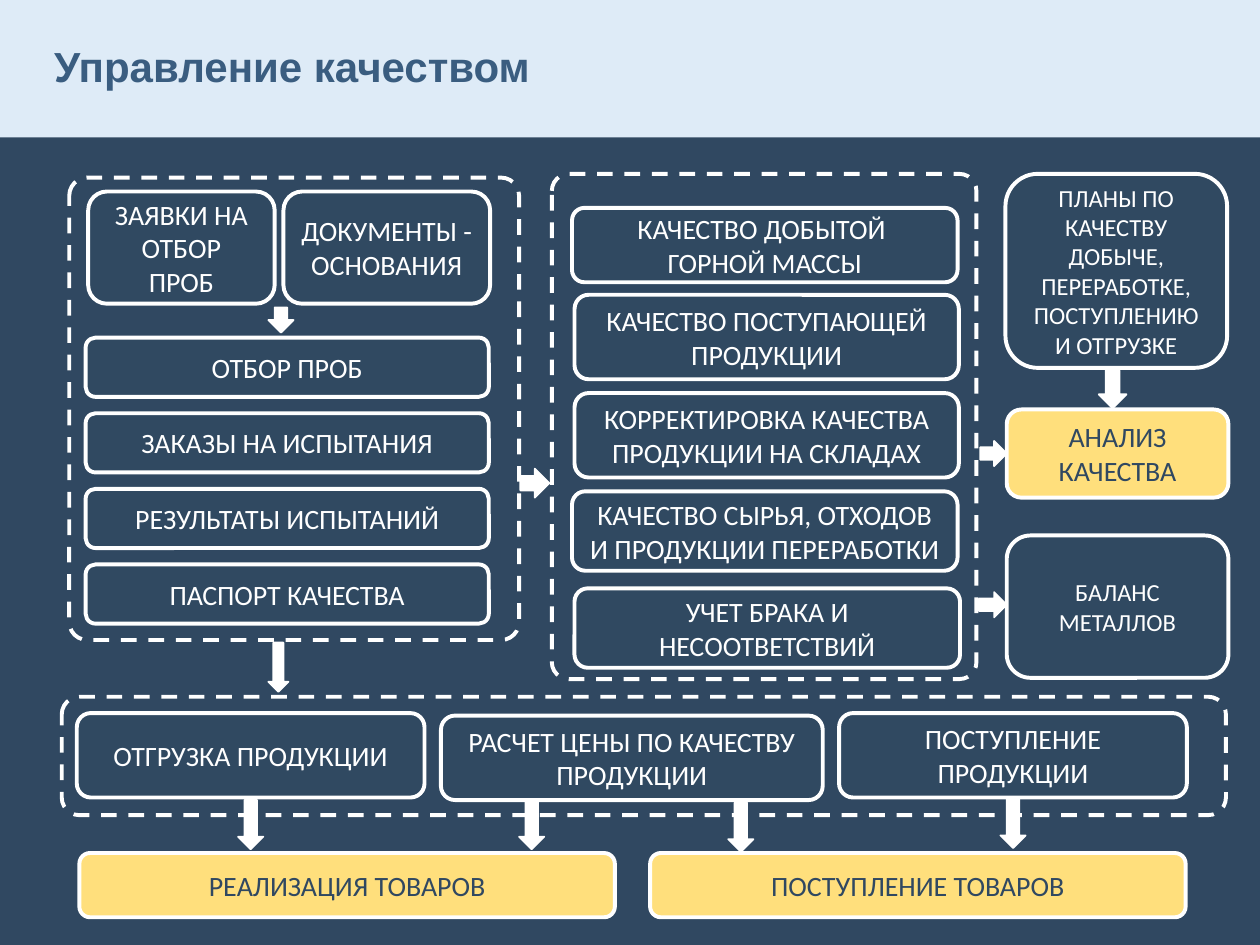
from dataclasses import dataclass

import pptx
import pptx.util
from pptx.dml.color import RGBColor
from pptx.enum.dml import MSO_LINE
from pptx.enum.shapes import MSO_SHAPE
from pptx.enum.text import MSO_ANCHOR, PP_ALIGN
from pptx.util import Inches


@dataclass(frozen=True)
class Theme:
    navy: str = "304861"
    box: str = "304961"
    band: str = "DEEBF7"
    title: str = "3A5D80"
    yellow: str = "FFDF7C"
    white: str = "FFFFFF"
    title_size: int = 24
    text_size: int = 16
    small_size: int = 14
    outline: float = 2.25
    arrow_line: float = 1


THEME = Theme()

# Boxes: text, left, top, width, height
SAMPLE_SOURCES = [
    ("ЗАЯВКИ НА ОТБОР ПРОБ", 0.7, 1.52, 1.48, 0.89),
    ("ДОКУМЕНТЫ - ОСНОВАНИЯ", 2.25, 1.52, 1.64, 0.89),
]
TESTING_STEPS = ["ОТБОР ПРОБ", "ЗАКАЗЫ НА ИСПЫТАНИЯ",
                 "РЕЗУЛЬТАТЫ ИСПЫТАНИЙ", "ПАСПОРТ КАЧЕСТВА"]
QUALITY_RECORDS = [
    ("КАЧЕСТВО ДОБЫТОЙ \vГОРНОЙ МАССЫ", 4.54, 1.65, 3.06, 0.59),
    ("КАЧЕСТВО ПОСТУПАЮЩЕЙ ПРОДУКЦИИ", 4.56, 2.34, 3.05, 0.67),
    ("КОРРЕКТИРОВКА КАЧЕСТВА ПРОДУКЦИИ НА СКЛАДАХ", 4.56, 3.12, 3.05, 0.67),
    ("КАЧЕСТВО СЫРЬЯ, ОТХОДОВ И ПРОДУКЦИИ ПЕРЕРАБОТКИ", 4.54, 3.9, 3.06, 0.63),
    ("УЧЕТ БРАКА И НЕСООТВЕТСТВИЙ", 4.56, 4.67, 3.06, 0.63),
]
DELIVERIES = [
    ("ОТГРУЗКА ПРОДУКЦИИ", 0.61, 5.66, 2.76, 0.67),
    ("РАСЧЕТ ЦЕНЫ ПО КАЧЕСТВУ ПРОДУКЦИИ", 3.5, 5.68, 3.03, 0.67),
    ("ПОСТУПЛЕНИЕ ПРОДУКЦИИ", 6.66, 5.66, 2.76, 0.67),
]
PLANNING = [
    ("ПЛАНЫ ПО КАЧЕСТВУ ДОБЫЧЕ, ПЕРЕРАБОТКЕ,\nПОСТУПЛЕНИЮ И ОТГРУЗКЕ",
     7.98, 1.38, 1.76, 1.54),
    ("БАЛАНС МЕТАЛЛОВ", 7.99, 4.25, 1.76, 1.13),
]
RESULTS = [
    ("АНАЛИЗ КАЧЕСТВА", 7.99, 3.25, 1.76, 0.7),
    ("РЕАЛИЗАЦИЯ ТОВАРОВ", 0.63, 6.77, 4.25, 0.51),
    ("ПОСТУПЛЕНИЕ ТОВАРОВ", 5.16, 6.77, 4.25, 0.51),
]
# Dashed frames: left, top, width, height, corner
FRAMES = [
    (0.55, 1.41, 3.57, 3.67, 0.04),
    (4.38, 1.38, 3.37, 4.01, 0.04),
    (0.49, 5.53, 9.24, 0.94, 0.15),
]
# Arrows: left, top, width, height
DOWN_ARROWS = [
    (2.13, 2.44, 0.2, 0.2), (2.13, 5.1, 0.16, 0.39), (8.72, 2.94, 0.22, 0.3),
    (1.89, 6.35, 0.2, 0.39), (4.12, 6.35, 0.2, 0.39),
    (5.78, 6.37, 0.2, 0.39), (7.94, 6.34, 0.2, 0.39),
]
RIGHT_ARROWS = [(4.13, 3.72, 0.23, 0.23), (7.78, 3.5, 0.21, 0.2),
                (7.77, 4.7, 0.22, 0.2)]


def rgb(color):
    return RGBColor.from_string(color)


def write(sp, text, *, size, color, font="Calibri", bold=False,
          align=PP_ALIGN.CENTER, spacing=None):
    """Fill a shape with text; \\n starts a paragraph and \\v breaks a line."""
    tf = sp.text_frame
    tf.text = text
    tf.word_wrap = True
    tf.vertical_anchor = MSO_ANCHOR.MIDDLE
    for p in tf.paragraphs:
        p.alignment = align
        p.line_spacing = spacing
        for r in p.runs:
            r.font.name = font
            r.font.size = pptx.util.Pt(size)
            r.font.bold = bold
            r.font.color.rgb = rgb(color)


def add_shape(s, kind, bounds, fill=None, line_width=None):
    sp = s.shapes.add_shape(kind, *map(Inches, bounds))
    sp.shadow.inherit = False
    if fill:
        sp.fill.solid()
        sp.fill.fore_color.rgb = rgb(fill)
    else:
        sp.fill.background()
    if line_width:
        sp.line.color.rgb = rgb(THEME.white)
        sp.line.width = pptx.util.Pt(line_width)
    else:
        sp.line.fill.background()
    return sp


def add_header(s, text):
    band = add_shape(s, MSO_SHAPE.RECTANGLE, (0, 0, 10, 1.09), THEME.band)
    title = s.shapes.title
    title.left, title.top, title.width, title.height = map(
        Inches, (0.33, 0.16, 6.06, 0.78))
    write(title, text, size=THEME.title_size, color=THEME.title, font="Arial",
          bold=True, align=PP_ALIGN.LEFT, spacing=0.9)
    title.element.addprevious(band.element)


def add_frame(s, *bounds, corner):
    sp = add_shape(s, MSO_SHAPE.ROUNDED_RECTANGLE, bounds,
                   line_width=THEME.outline)
    sp.adjustments[0] = corner
    sp.line.dash_style = MSO_LINE.DASH


def add_boxes(s, boxes, fill=THEME.box, color=THEME.white,
              size=THEME.text_size):
    for text, *bounds in boxes:
        sp = add_shape(s, MSO_SHAPE.ROUNDED_RECTANGLE, bounds, fill,
                       THEME.outline)
        write(sp, text, size=size, color=color)


def add_arrows(s, kind, arrows):
    for bounds in arrows:
        add_shape(s, kind, bounds, THEME.white, THEME.arrow_line)


def main():
    prs = pptx.Presentation()
    prs.slide_width, prs.slide_height = Inches(10), Inches(7.5)
    s = prs.slides.add_slide(prs.slide_layouts[5])
    s.background.fill.solid()
    s.background.fill.fore_color.rgb = rgb(THEME.navy)

    add_header(s, "Управление качеством")
    for *bounds, corner in FRAMES:
        add_frame(s, *bounds, corner=corner)
    steps = [(text, 0.68, 2.68 + 0.6 * i, 3.2, 0.47)
             for i, text in enumerate(TESTING_STEPS)]
    add_boxes(s, SAMPLE_SOURCES + steps + QUALITY_RECORDS + DELIVERIES)
    add_boxes(s, PLANNING, size=THEME.small_size)
    add_boxes(s, RESULTS, fill=THEME.yellow, color=THEME.navy)
    add_arrows(s, MSO_SHAPE.DOWN_ARROW, DOWN_ARROWS)
    add_arrows(s, MSO_SHAPE.RIGHT_ARROW, RIGHT_ARROWS)
    prs.save("out.pptx")


if __name__ == "__main__":
    main()
